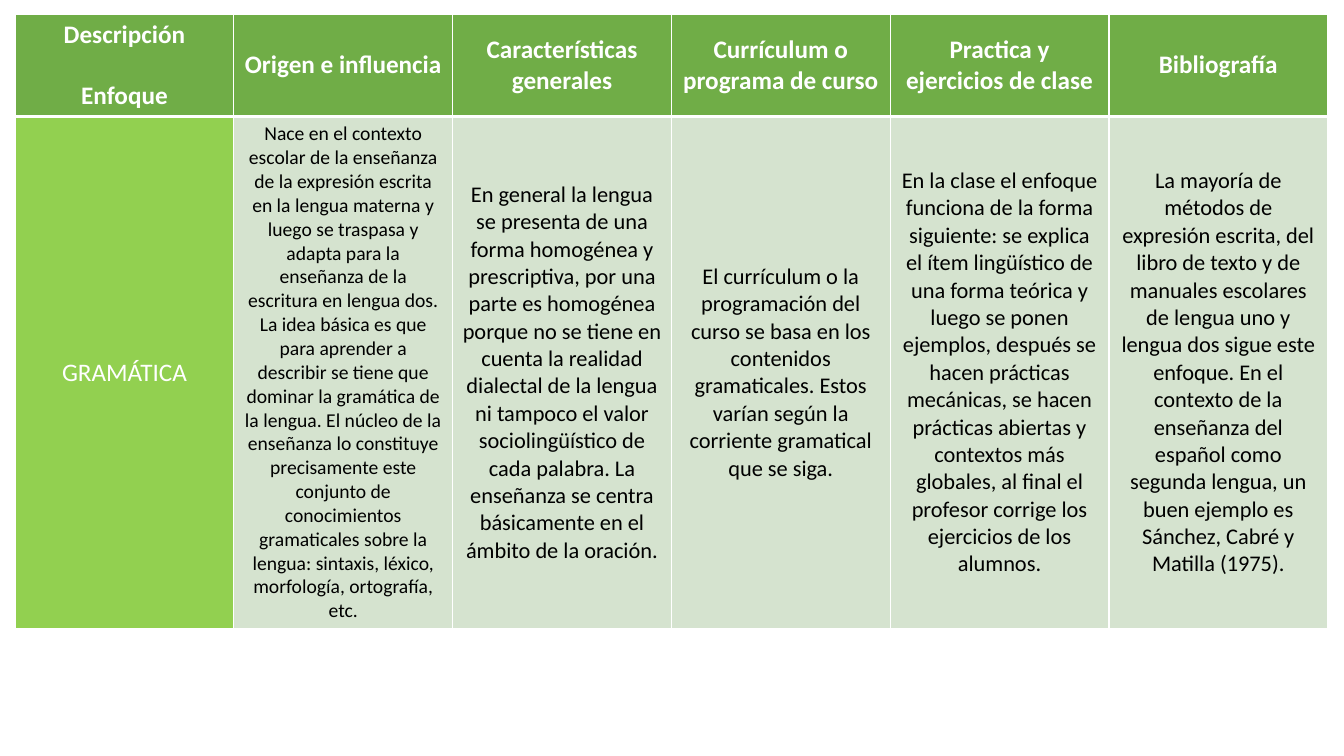
import pptx
import pptx.enum.text
import pptx.oxml
import pptx.oxml.ns
import pptx.util
from pptx.dml.color import RGBColor
from pptx.util import Inches

COLORS = {
    "header": "70AD47",
    "approach": "92D050",
    "body": "D5E3CF",
    "white": "FFFFFF",
    "black": "000000",
}
COLUMN_WIDTH = Inches(2.17)
ROW_HEIGHTS = [Inches(1.01), Inches(5.08)]

HEADINGS = [
    ["Descripción", "Enfoque"],
    ["Origen e influencia"],
    ["Características generales"],
    ["Currículum o programa de curso"],
    ["Practica y ejercicios de clase"],
    ["Bibliografía"],
]
APPROACH = "GRAMÁTICA"
# Text and size in points
DESCRIPTIONS = [
    ("Nace en el contexto escolar de la enseñanza de la expresión escrita en la "
     "lengua materna y luego se traspasa y adapta para la enseñanza de la escritura "
     "en lengua dos. La idea básica es que para aprender a describir se tiene que "
     "dominar la gramática de la lengua. El núcleo de la enseñanza lo constituye "
     "precisamente este conjunto de conocimientos gramaticales sobre la lengua: "
     "sintaxis, léxico, morfología, ortografía, etc.", 14),
    ("En general la lengua se presenta de una forma homogénea y prescriptiva, por "
     "una parte es homogénea porque no se tiene en cuenta la realidad dialectal de "
     "la lengua ni tampoco el valor sociolingüístico de cada palabra. La enseñanza "
     "se centra básicamente en el ámbito de la oración.", 16),
    ("El currículum o la programación del curso se basa en los contenidos "
     "gramaticales. Estos varían según la corriente gramatical que se siga.", 16),
    ("En la clase el enfoque funciona de la forma siguiente: se explica el ítem "
     "lingüístico de una forma teórica y luego se ponen ejemplos, después se hacen "
     "prácticas mecánicas, se hacen prácticas abiertas y contextos más globales, al "
     "final el profesor corrige los ejercicios de los alumnos.", 16),
    ("La mayoría de métodos de expresión escrita, del libro de texto y de manuales "
     "escolares de lengua uno y lengua dos sigue este enfoque. En el contexto de la "
     "enseñanza del español como segunda lengua, un buen ejemplo es Sánchez, Cabré y "
     "Matilla (1975).", 16),
]


def write_text(frame, lines, size=18, color="white", bold=False, gap=22):
    """Write one centred paragraph per line, with a gap in points between them."""
    for index, line in enumerate(lines):
        paragraph = frame.add_paragraph() if index else frame.paragraphs[0]
        paragraph.alignment = pptx.enum.text.PP_ALIGN.CENTER
        if index:
            paragraph.space_before = pptx.util.Pt(gap)
        run = paragraph.add_run()
        run.text = line
        run.font.name = "Calibri"
        run.font.size = pptx.util.Pt(size)
        run.font.bold = bold
        run.font.color.rgb = RGBColor.from_string(COLORS[color])


def set_borders(cell, **widths):
    """Give the cell white borders; widths in points override 1 pt by side."""
    properties = cell._tc.get_or_add_tcPr()
    for index, side in enumerate("LRTB"):
        width = pptx.util.Pt(widths.get(side, 1))
        border = pptx.oxml.parse_xml(
            f'<a:ln{side} {pptx.oxml.ns.nsdecls("a")} w="{width}"><a:solidFill>'
            f'<a:srgbClr val="{COLORS["white"]}"/></a:solidFill></a:ln{side}>')
        properties.insert(index, border)


def format_cell(cell, lines, fill, borders, **text_format):
    cell.vertical_anchor = pptx.enum.text.MSO_ANCHOR.MIDDLE
    cell.fill.solid()
    cell.fill.fore_color.rgb = RGBColor.from_string(COLORS[fill])
    set_borders(cell, **borders)
    write_text(cell.text_frame, lines, **text_format)


def add_approach_table(slide):
    table = slide.shapes.add_table(
        len(ROW_HEIGHTS), len(HEADINGS), Inches(0.15), Inches(0.14),
        COLUMN_WIDTH * len(HEADINGS), sum(ROW_HEIGHTS)).table
    for column in table.columns:
        column.width = COLUMN_WIDTH
    for row, height in zip(table.rows, ROW_HEIGHTS):
        row.height = height

    for column, heading in enumerate(HEADINGS):
        format_cell(table.cell(0, column), heading, "header", {"B": 3}, bold=True)
    format_cell(table.cell(1, 0), [APPROACH], "approach", {"T": 3})
    for column, (description, size) in enumerate(DESCRIPTIONS, start=1):
        format_cell(table.cell(1, column), [description], "body", {"T": 3},
                    size=size, color="black")


def main():
    presentation = pptx.Presentation()
    presentation.slide_width = Inches(13.33)
    presentation.slide_height = Inches(7.5)
    blank_layout = presentation.slide_layouts[6]
    add_approach_table(presentation.slides.add_slide(blank_layout))
    presentation.save("out.pptx")


if __name__ == "__main__":
    main()
